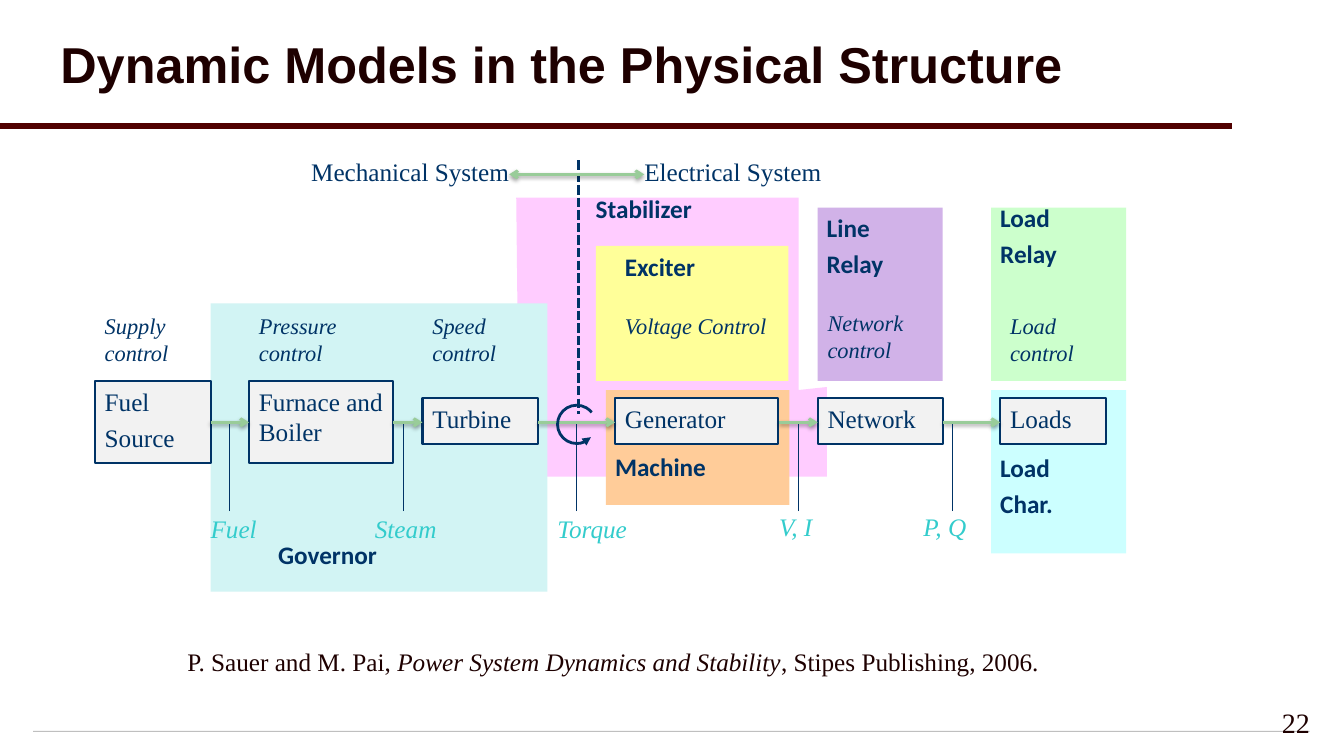
import pptx
import pptx.dml.color
import pptx.enum.dml
import pptx.enum.shapes
import pptx.enum.text
import pptx.oxml
import pptx.oxml.ns
import pptx.util
from pptx.util import Inches

RGBColor = pptx.dml.color.RGBColor
SHAPE = pptx.enum.shapes.MSO_SHAPE
ALIGN = pptx.enum.text.PP_ALIGN
MIDDLE = pptx.enum.text.MSO_ANCHOR.MIDDLE

NAVY = RGBColor(0x00, 0x33, 0x66)
TEAL = RGBColor(0x33, 0xCC, 0xCC)
INK = RGBColor(0x1E, 0x00, 0x00)
MAROON = RGBColor(0x50, 0x00, 0x00)
GREEN = RGBColor(0x99, 0xCC, 0x99)
PALE_GREY = RGBColor(0xF2, 0xF2, 0xF2)
RULE_GREY = RGBColor(0xBF, 0xBF, 0xBF)
PINK = RGBColor(0xFF, 0xCC, 0xFF)
ORANGE = RGBColor(0xFF, 0xCC, 0x99)
PURPLE = RGBColor(0xD1, 0xB2, 0xE8)
LIGHT_GREEN = RGBColor(0xCC, 0xFF, 0xCC)
LIGHT_CYAN = RGBColor(0xCC, 0xFF, 0xFF)
PALE_TEAL = RGBColor(0xD2, 0xF4, 0xF4)
YELLOW = RGBColor(0xFF, 0xFF, 0x99)

SERIF = "Times New Roman"
FLOW_Y = 4.19
SHADOW = (
    '<a:outerShdw blurRad="39370" dist="20320" dir="5400000" rotWithShape="0">'
    '<a:srgbClr val="000000"><a:alpha val="38000"/></a:srgbClr></a:outerShdw>'
)


def inches(values):
    return [Inches(value) for value in values]


def write(frame, lines, size=18, font=SERIF, color=NAVY, bold=False,
          italic=False, align=ALIGN.LEFT, inset=0.1):
    frame.word_wrap = True
    frame.margin_left = frame.margin_right = Inches(inset)
    frame.margin_top = frame.margin_bottom = Inches(0.05)
    for index, line in enumerate(lines):
        paragraph = frame.add_paragraph() if index else frame.paragraphs[0]
        paragraph.alignment = align
        if index:
            paragraph.space_before = pptx.util.Pt(4)
        parts = line if isinstance(line, list) else [(line, italic)]
        for text, slanted in parts:
            run = paragraph.add_run()
            run.text = text
            if len(parts) > 1:
                run.font.italic = slanted
        paragraph.font.size = pptx.util.Pt(size)
        paragraph.font.name = font
        paragraph.font.color.rgb = color
        paragraph.font.bold = bold
        if len(parts) == 1:
            paragraph.font.italic = italic


def add_label(slide, at, *lines, **style):
    frame = slide.shapes.add_textbox(*inches(at)).text_frame
    write(frame, lines, **style)
    return frame


def add_panel(slide, at, color):
    panel = slide.shapes.add_shape(SHAPE.RECTANGLE, *inches(at))
    panel.shadow.inherit = False
    panel.fill.solid()
    panel.fill.fore_color.rgb = color
    panel.line.fill.background()
    return panel


def add_stage(slide, at, *lines):
    stage = add_panel(slide, at, PALE_GREY)
    stage.line.color.rgb = NAVY
    stage.line.width = pptx.util.Pt(1.5)
    stage.text_frame.vertical_anchor = pptx.enum.text.MSO_ANCHOR.TOP
    write(stage.text_frame, lines)


def add_arrowhead(line, end, kind):
    head = pptx.oxml.parse_xml(f'<a:{end} {pptx.oxml.ns.nsdecls("a")} type="{kind}"/>')
    line.line._get_or_add_ln().append(head)


def add_line(slide, start, end, color, width, shadow=""):
    line = slide.shapes.add_connector(
        pptx.enum.shapes.MSO_CONNECTOR.STRAIGHT, *inches((*start, *end)))
    line.line.color.rgb = color
    line.line.width = pptx.util.Pt(width)
    line._element.spPr.append(pptx.oxml.parse_xml(
        f'<a:effectLst {pptx.oxml.ns.nsdecls("a")}>{shadow}</a:effectLst>'))
    return line


def add_flow(slide, left, right, y=FLOW_Y, both_ways=False):
    flow = add_line(slide, (left, y), (right, y), GREEN, 2, SHADOW)
    if both_ways:
        add_arrowhead(flow, "headEnd", "arrow")
    add_arrowhead(flow, "tailEnd", "arrow")


def add_stabilizer_area(slide):
    outline = [(8.2, 3.84), (7.92, 3.87), (7.92, 1.96), (5.12, 1.96), (5.15, 4.73)]
    builder = slide.shapes.build_freeform(Inches(8.2), Inches(4.73))
    builder.add_line_segments([inches(point) for point in outline], close=True)
    area = builder.convert_to_shape()
    area.shadow.inherit = False
    area.fill.solid()
    area.fill.fore_color.rgb = PINK
    area.line.fill.background()


def add_rotation(slide):
    rotation = slide.shapes.add_shape(SHAPE.ARC, *inches((5.53, 4.02, 0.38, 0.38)))
    rotation.shadow.inherit = False
    rotation.adjustments[0] = 25.21
    rotation.adjustments[1] = 192.86
    rotation.fill.background()
    rotation.line.color.rgb = NAVY
    rotation.line.width = pptx.util.Pt(2)
    add_arrowhead(rotation, "headEnd", "triangle")


def main():
    deck = pptx.Presentation()
    deck.slide_width, deck.slide_height = inches((13.33, 7.5))
    slide = deck.slides.add_slide(deck.slide_layouts[6])

    add_panel(slide, (0.33, 7.25, 12.66, 0.01), RULE_GREY)
    add_line(slide, (0, 1.25), (12.22, 1.25), MAROON, 4)
    title = add_label(slide, (0.5, 0.08, 12.22, 1.17),
                      "Dynamic Models in the Physical Structure",
                      size=36, font="Arial", color=INK, bold=True)
    title.vertical_anchor = MIDDLE
    title.paragraphs[0].line_spacing = 0.9

    add_stabilizer_area(slide)
    for at, color in [
        ((6.01, 3.87, 1.82, 1.14), ORANGE),
        ((8.11, 2.06, 1.24, 1.72), PURPLE),
        ((9.83, 2.06, 1.34, 1.72), LIGHT_GREEN),
        ((9.83, 3.87, 1.34, 1.62), LIGHT_CYAN),
        ((2.09, 3.01, 3.34, 2.86), PALE_TEAL),
        ((5.91, 2.44, 1.91, 1.34), YELLOW),
    ]:
        add_panel(slide, at, color)

    for at, inset, *model in [
        ((6.1, 4.43, 1.62, 0.58), 0, "Machine"),
        ((2.66, 5.3, 2.58, 0.58), 0.1, "Governor"),
        ((6.1, 2.44, 1.62, 0.58), 0.1, "Exciter"),
        ((9.92, 4.44, 1.15, 1.04), 0, "Load", "Char."),
        ((9.92, 1.96, 1.15, 1.04), 0, "Load", "Relay"),
        ((8.2, 2.06, 0.96, 1.04), 0, "Line", "Relay"),
        ((5.81, 1.87, 1.82, 0.58), 0.1, "Stabilizer"),
    ]:
        add_label(slide, at, *model, font="Calibri", bold=True, inset=inset)

    for left, width, top, height, control_top, control, *stage in [
        (0.94, 1.15, 3.78, 0.81, 3.05, "Supply control", "Fuel", "Source"),
        (2.47, 1.43, 3.78, 0.81, 3.05, "Pressure control", "Furnace and Boiler"),
        (4.19, 1.15, 3.95, 0.46, 3.05, "Speed control", "Turbine"),
        (6.1, 1.62, 3.95, 0.46, 3.05, "Voltage Control", "Generator"),
        (8.11, 1.24, 3.95, 0.46, 3.02, "Network control", "Network"),
        (9.92, 1.05, 3.95, 0.46, 3.05, "Load control", "Loads"),
    ]:
        add_stage(slide, (left, top, width, height), *stage)
        add_label(slide, (left, control_top, width, 0.73), control,
                  size=16, italic=True)

    add_line(slide, (5.74, 1.59), (5.74, 4.11), NAVY, 2.25).line.dash_style = (
        pptx.enum.dml.MSO_LINE.SQUARE_DOT)
    add_label(slide, (2.66, 1.5, 2.39, 0.46), "Mechanical System",
              align=ALIGN.RIGHT, inset=0)
    add_label(slide, (6.39, 1.5, 2.2, 0.46), "Electrical System", inset=0)
    add_flow(slide, 5.05, 6.39, y=1.73, both_ways=True)
    for left, right in [(2.09, 2.47), (3.9, 4.19), (5.34, 6.1),
                        (7.73, 8.11), (9.35, 9.92)]:
        add_flow(slide, left, right)

    for x, left, top, width, quantity in [
        (2.28, 1.99, 5.04, 1.05, "Fuel"),
        (4, 3.62, 5.04, 1.05, "Steam"),
        (5.72, 5.43, 5.04, 1.05, "Torque"),
        (7.92, 7.63, 5.02, 0.76, "V, I"),
        (9.45, 9.06, 5.02, 0.76, "P, Q"),
    ]:
        add_line(slide, (x, 5.07), (x, 4.21), NAVY, 0.75)
        add_label(slide, (left, top, width, 0.46), quantity, color=TEAL, italic=True)
    add_rotation(slide)

    add_label(slide, (0.87, 6.36, 10.42, 0.48),
              [("P. Sauer and M. Pai, ", False),
               ("Power System Dynamics and Stability", True),
               (", Stipes Publishing, 2006.", False)],
              color=INK, align=ALIGN.CENTER)
    page_number = add_label(slide, (12.42, 6.92, 0.67, 0.5), "22",
                            size=20, color=INK, align=ALIGN.RIGHT)
    page_number.vertical_anchor = MIDDLE
    deck.save("out.pptx")


if __name__ == "__main__":
    main()
